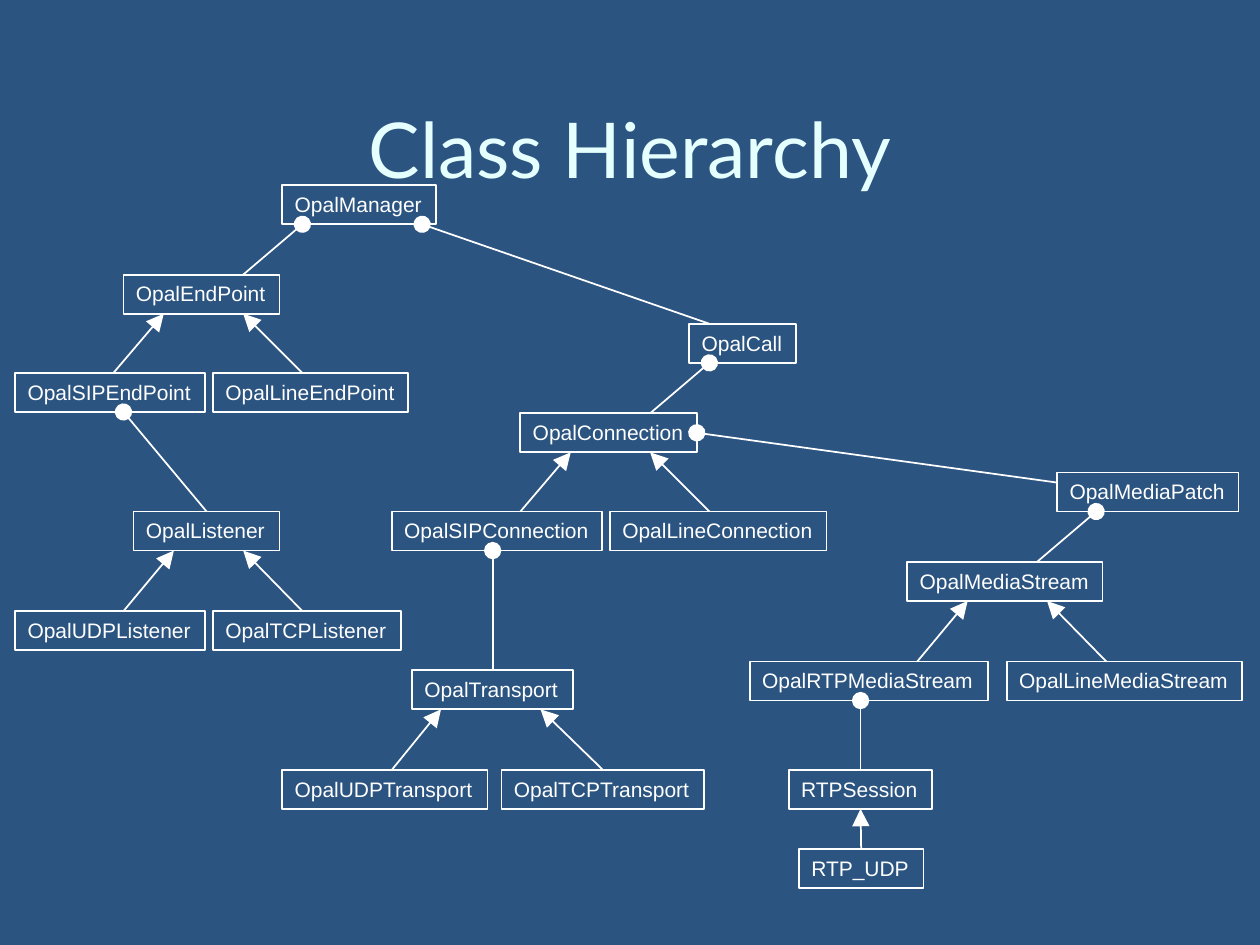
import pptx
import pptx.util
import pptx.dml.color
import pptx.enum.shapes
import pptx.enum.text
import pptx.oxml.ns
import pptx.oxml.xmlchemy

Inches = pptx.util.Inches
Pt = pptx.util.Pt
RGB = pptx.dml.color.RGBColor.from_string
PP = pptx.enum.text.PP_ALIGN
ANCHOR = pptx.enum.text.MSO_ANCHOR
qn = pptx.oxml.ns.qn
OxmlElement = pptx.oxml.xmlchemy.OxmlElement

THEME = {
    "background": RGB("2B5481"),
    "line": RGB("FFFFFF"),
    "line_width": Pt(1),
    "title": {"name": "Lato", "size": Pt(44), "color": RGB("E5FFFF")},
    "label": {"name": "Arial", "size": Pt(12), "color": RGB("FFFFFF")},
}
BOX_HEIGHT = 0.31
TOP, LEFT, BOTTOM, RIGHT = range(4)

CLASSES = {
    "OpalManager": (2.24, 1.47, 1.22),
    "OpalEndPoint": (0.98, 2.18, 1.24),
    "OpalSIPEndPoint": (0.12, 2.96, 1.51),
    "OpalLineEndPoint": (1.69, 2.96, 1.55),
    "OpalListener": (1.06, 4.06, 1.16),
    "OpalUDPListener": (0.12, 4.85, 1.51),
    "OpalTCPListener": (1.69, 4.85, 1.49),
    "OpalCall": (5.47, 2.57, 0.85),
    "OpalConnection": (4.13, 3.28, 1.4),
    "OpalSIPConnection": (3.11, 4.06, 1.67),
    "OpalLineConnection": (4.84, 4.06, 1.72),
    "OpalTransport": (3.27, 5.32, 1.28),
    "OpalUDPTransport": (2.24, 6.11, 1.63),
    "OpalTCPTransport": (3.98, 6.11, 1.61),
    "OpalMediaPatch": (8.39, 3.75, 1.44),
    "OpalMediaStream": (7.2, 4.46, 1.55),
    "OpalRTPMediaStream": (5.95, 5.25, 1.89),
    "OpalLineMediaStream": (7.99, 5.25, 1.87),
    "RTPSession": (6.26, 6.11, 1.14),
    "RTP_UDP": (6.34, 6.74, 0.99),
}

INHERITS = [
    ("OpalSIPEndPoint", 0.9, "OpalEndPoint", 1.3),
    ("OpalLineEndPoint", 2.4, "OpalEndPoint", 1.93),
    ("OpalUDPListener", 0.98, "OpalListener", 1.38),
    ("OpalTCPListener", 2.4, "OpalListener", 1.93),
    ("OpalSIPConnection", 4.13, "OpalConnection", 4.53),
    ("OpalLineConnection", 5.63, "OpalConnection", 5.16),
    ("OpalUDPTransport", 3.11, "OpalTransport", 3.5),
    ("OpalTCPTransport", None, "OpalTransport", 4.29),
    ("OpalRTPMediaStream", 7.28, "OpalMediaStream", 7.68),
    ("OpalLineMediaStream", 8.78, "OpalMediaStream", 8.31),
    ("RTP_UDP", None, "RTPSession", None),
]
OWNED_BY = [
    ("OpalEndPoint", 1.93, "OpalManager", 2.4),
    ("OpalCall", 5.63, "OpalManager", 3.35),
    ("OpalListener", None, "OpalSIPEndPoint", 0.98),
    ("OpalConnection", 5.16, "OpalCall", 5.63),
    ("OpalTransport", None, "OpalSIPConnection", 3.91),
    ("OpalMediaStream", 8.23, "OpalMediaPatch", 8.7),
    ("RTPSession", None, "OpalRTPMediaStream", 6.83),
]


def apply_format(obj, values):
    for name, value in values.items():
        setattr(obj, name, value)


def write_text(tf, text, style, align):
    p = tf.paragraphs[0]
    p.alignment = align
    r = p.add_run()
    r.text = text
    apply_format(r.font, {"name": style["name"], "size": style["size"]})
    r.font.color.rgb = style["color"]


def style_line(line):
    line.color.rgb = THEME["line"]
    line.width = THEME["line_width"]


def add_title(s, text):
    sp = s.shapes.title
    apply_format(sp, {"left": Inches(0.5), "top": Inches(0.42),
                      "width": Inches(9), "height": Inches(1.5)})
    sp.text_frame.vertical_anchor = ANCHOR.MIDDLE
    write_text(sp.text_frame, text, THEME["title"], PP.CENTER)


def add_class_box(s, name, left, top, width):
    sp = s.shapes.add_shape(
        pptx.enum.shapes.MSO_SHAPE.RECTANGLE,
        *map(Inches, (left, top, width, BOX_HEIGHT)))
    sp.shadow.inherit = False
    sp.fill.background()
    style_line(sp.line)
    tf = sp.text_frame
    apply_format(tf, {"word_wrap": False, "vertical_anchor": ANCHOR.TOP,
                      "auto_size": pptx.enum.text.MSO_AUTO_SIZE.SHAPE_TO_FIT_TEXT})
    write_text(tf, name, THEME["label"], PP.LEFT)
    return sp


def edge_point(sp, side, offset):
    if side in (TOP, BOTTOM):
        x = sp.left + sp.width // 2 if offset is None else Inches(offset)
        return x, sp.top + (sp.height if side == BOTTOM else 0)
    y = sp.top + sp.height // 2 if offset is None else Inches(offset)
    return sp.left + (sp.width if side == RIGHT else 0), y


def add_link(s, child, start, parent, end, head, child_side=TOP, parent_side=BOTTOM):
    c = s.shapes.add_connector(
        pptx.enum.shapes.MSO_CONNECTOR.STRAIGHT,
        *edge_point(child, child_side, start), *edge_point(parent, parent_side, end))
    if start is None:
        c.begin_connect(child, child_side)
    if end is None:
        c.end_connect(parent, parent_side)
    style_line(c.line)
    sp_pr = c.element.spPr
    tail = OxmlElement("a:tailEnd")
    for key, value in {"type": head, "w": "lg", "len": "lg"}.items():
        tail.set(key, value)
    sp_pr.find(qn("a:ln")).append(tail)
    sp_pr.append(OxmlElement("a:effectLst"))


def main():
    prs = pptx.Presentation()
    apply_format(prs, {"slide_width": Inches(10), "slide_height": Inches(7.5)})
    s = prs.slides.add_slide(prs.slide_layouts[5])
    s.background.fill.solid()
    s.background.fill.fore_color.rgb = THEME["background"]

    add_title(s, "Class Hierarchy")
    boxes = {name: add_class_box(s, name, *place) for name, place in CLASSES.items()}
    for links, head in ((INHERITS, "triangle"), (OWNED_BY, "oval")):
        for child, start, parent, end in links:
            add_link(s, boxes[child], start, boxes[parent], end, head)
    add_link(s, boxes["OpalMediaPatch"], 3.83, boxes["OpalConnection"], None,
             "oval", LEFT, RIGHT)
    prs.save("out.pptx")


if __name__ == "__main__":
    main()
